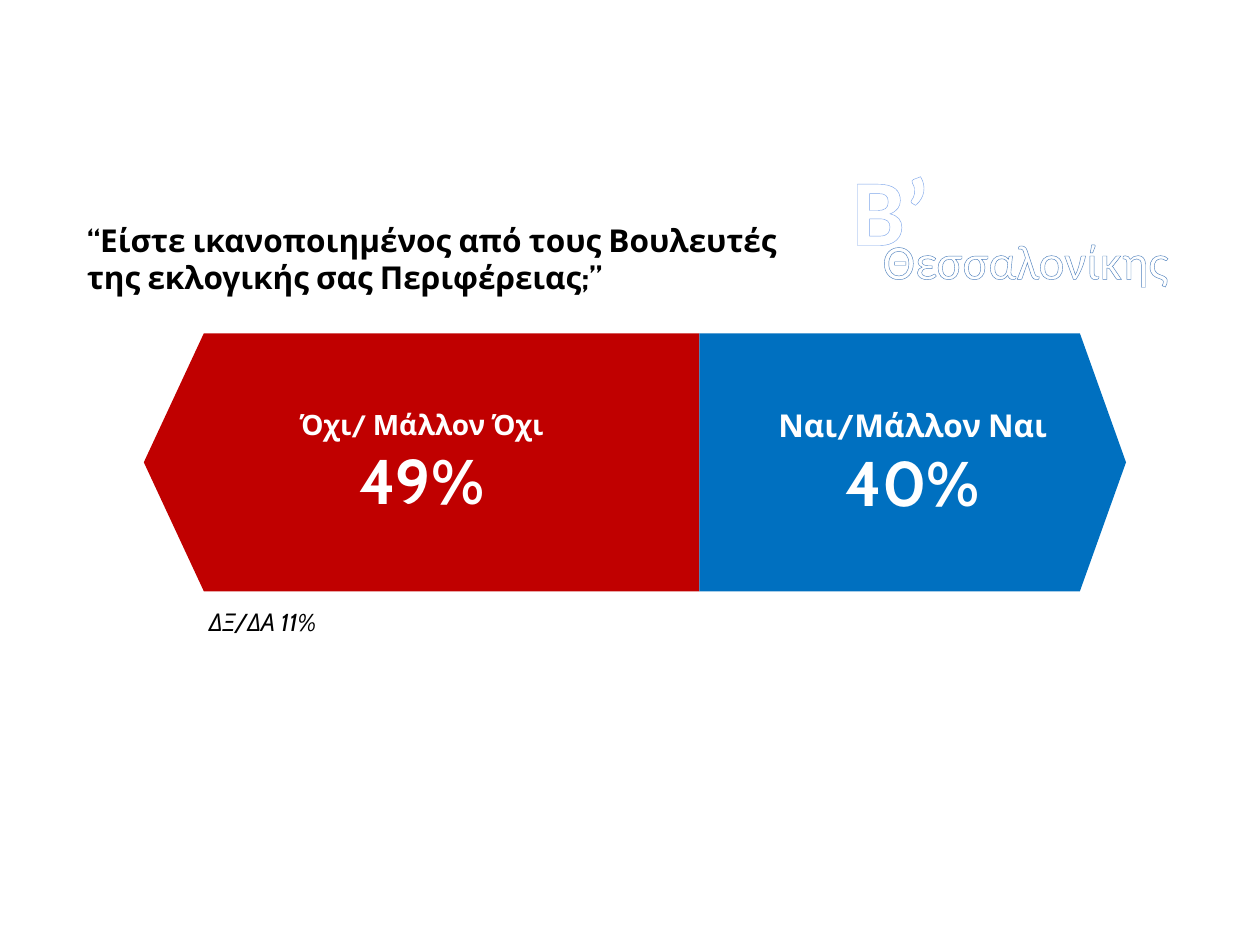
from lxml.etree import SubElement
from pptx import Presentation
from pptx.dml.color import RGBColor
from pptx.enum.text import MSO_ANCHOR, MSO_AUTO_SIZE, PP_ALIGN
from pptx.oxml import parse_xml
from pptx.oxml.ns import nsdecls, qn
from pptx.util import Cm, Pt

COLORS = {"red": "C00000", "blue": "0070C0", "white": "FFFFFF",
          "black": "000000", "glow": "7EA6EA", "edge": "4F81BD"}

QUESTION = "“Είστε ικανοποιημένος από τους Βουλευτές της εκλογικής σας Περιφέρειας;”"
TOP, BOTTOM, SPLIT = 6.72, 11.92, 14.1
ANSWERS = [
    {"label": "Όχι/ Μάλλον Όχι", "value": "49%", "size": 16,
     "color": "red", "shoulder": 4.11, "tip": 2.9},
    {"label": "Ναι/Μάλλον Ναι", "value": "40%", "size": 18,
     "color": "blue", "shoulder": 21.77, "tip": 22.7},
]
NOTE = ("ΔΞ/ΔΑ 11%", (3.96, 12.12, 2.95, 0.86))
REGION = [
    ("B’", (16.89, 2.92, 2.13, 2.57), 54, True, "glow", 2.5),
    ("Θεσσαλονίκης", (17.5, 4.52, 6.35, 1.45), 28, False, "edge", 0.8),
]


def rgb(name):
    return RGBColor.from_string(COLORS[name])


def style(p, size, color, font="Cabin", bold=False, italic=False, align=PP_ALIGN.LEFT):
    p.alignment = align
    for r in p.runs:
        r.font.name = font
        r.font.size = Pt(size)
        r.font.bold = bold
        r.font.italic = italic
        r.font.color.rgb = rgb(color)


def add_text(s, text, box):
    tf = s.shapes.add_textbox(*map(Cm, box)).text_frame
    tf.text = text
    tf.word_wrap = False
    tf.auto_size = MSO_AUTO_SIZE.SHAPE_TO_FIT_TEXT
    return tf.paragraphs[0]


def outline(r, color, width):
    ln = parse_xml(f'<a:ln {nsdecls("a")} w="{Pt(width)}"/>')
    fill = SubElement(ln, qn("a:solidFill"))
    SubElement(fill, qn("a:srgbClr")).set("val", COLORS[color])
    r.font._element.insert(0, ln)


def add_answer(s, answer):
    shoulder, tip = answer["shoulder"], answer["tip"]
    points = [(SPLIT, BOTTOM), (SPLIT, TOP), (shoulder, TOP), (tip, (TOP + BOTTOM) / 2)]
    fb = s.shapes.build_freeform(Cm(shoulder), Cm(BOTTOM))
    fb.add_line_segments([(Cm(x), Cm(y)) for x, y in points], close=True)
    sp = fb.convert_to_shape()
    sp.shadow.inherit = False
    sp.fill.solid()
    sp.fill.fore_color.rgb = rgb(answer["color"])
    sp.line.fill.background()
    tf = sp.text_frame
    tf.text = answer["label"] + "\n" + answer["value"]
    tf.word_wrap = False
    tf.vertical_anchor = MSO_ANCHOR.MIDDLE
    for p, size in zip(tf.paragraphs, (answer["size"], 36)):
        style(p, size, "white", bold=True, align=PP_ALIGN.CENTER)


def main():
    prs = Presentation()
    prs.slide_width, prs.slide_height = Cm(25.4), Cm(19.05)
    s = prs.slides.add_slide(prs.slide_layouts[5])

    title = s.shapes.title
    title.left, title.top, title.width, title.height = map(Cm, (1.5, 4.32, 15.6, 1.8))
    tf = title.text_frame
    tf.text = QUESTION
    tf.word_wrap = True
    tf.auto_size = MSO_AUTO_SIZE.NONE
    tf.vertical_anchor = MSO_ANCHOR.TOP
    style(tf.paragraphs[0], 18, "black", bold=True)

    for answer in ANSWERS:
        add_answer(s, answer)

    style(add_text(s, *NOTE), 14, "black", italic=True)

    for text, box, size, bold, edge, width in REGION:
        p = add_text(s, text, box)
        style(p, size, "white", font="Calibri", bold=bold, align=PP_ALIGN.CENTER)
        outline(p.runs[0], edge, width)

    prs.save("out.pptx")


if __name__ == "__main__":
    main()
